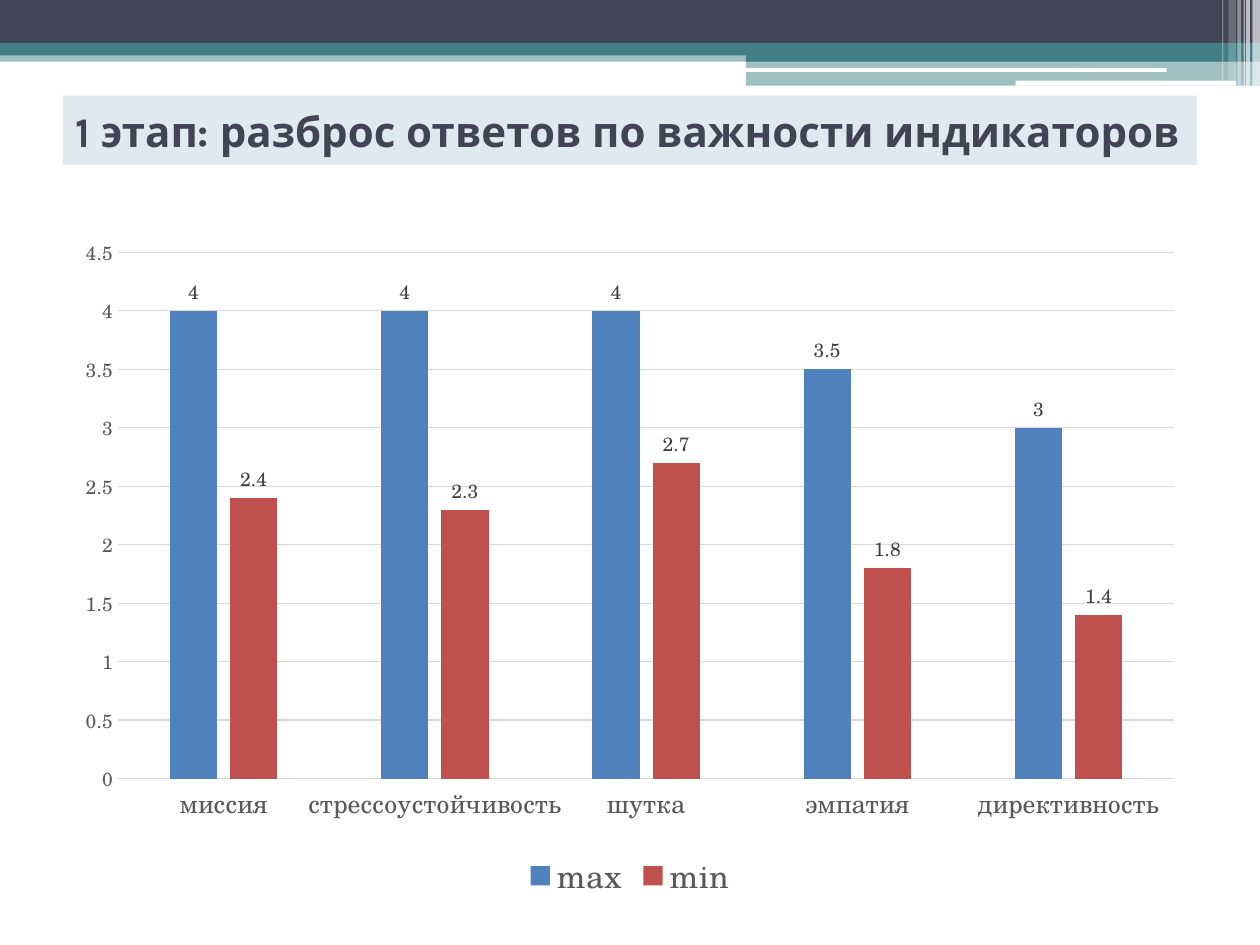
"""Build a slide with a clustered column chart of indicator importance ratings."""
import lxml.etree
import pptx
import pptx.chart.data
import pptx.dml.color
import pptx.enum.chart
import pptx.enum.shapes
import pptx.enum.text
import pptx.oxml.ns
import pptx.util

Inches = pptx.util.Inches
Pt = pptx.util.Pt
SHAPE = pptx.enum.shapes.MSO_SHAPE
XL = pptx.enum.chart

THEME = {
    "dark": "424456", "teal": "438086", "white": "FFFFFF", "title_fill": "DEE9F0",
    "grid": "D9D9D9", "axis_text": "595959", "label_text": "404040", "text": "000000",
    "title_font": "Karla", "chart_font": "TeX Gyre Schola",
    "title_size": 24, "base_size": 10, "category_size": 14.7,
    "value_size": 11, "legend_size": 18.4, "line_width": 0.69,
}

TITLE = "1 этап: разброс ответов по важности индикаторов"
CATEGORIES = ["миссия", "стрессоустойчивость", "шутка", "эмпатия", "директивность"]
SERIES = [
    ("max", "4F81BD", [4, 4, 4, 3.5, 3]),
    ("min", "C0504D", [2.4, 2.3, 2.7, 1.8, 1.4]),
]

BANDS = [
    ((0, 0.4, 10, 0.09), "teal", 50),
    ((0, 0, 10, 0.34), "dark", 100),
    ((0, 0.34, 10, 0.1), "teal", 100),
    ((5.92, 0.39, 4.08, 0.1), "teal", 100),
    ((5.92, 0.48, 4.08, 0.2), "teal", 50),
]
HIGHLIGHTS = [(5.91, 0.54, 3.35, 0.03), (8.06, 0.64, 1.75, 0.04)]
STRIPES = [
    (9.94, 0.06, 0.68, 65), (9.89, 0.03, 0.68, 65), (9.87, 0.01, 0.68, 60),
    (9.82, 0.03, 0.68, 40), (9.75, 0.06, 0.64, 20), (9.7, 0.01, 0.64, 30),
]
TITLE_BOX = (0.5, 0.76, 9, 0.55)
CHART_BOX = (0.5, 1.78, 9, 5.41)


def rgb(value):
    return pptx.dml.color.RGBColor.from_string(value)


def add_box(s, box, color, opacity=100, kind=SHAPE.RECTANGLE):
    sp = s.shapes.add_shape(kind, *map(Inches, box))
    sp.shadow.inherit = False
    sp.line.fill.background()
    sp.fill.solid()
    sp.fill.fore_color.rgb = rgb(THEME[color])
    if opacity < 100:
        clr = sp.fill._xPr.find(".//" + pptx.oxml.ns.qn("a:srgbClr"))
        lxml.etree.SubElement(clr, pptx.oxml.ns.qn("a:alpha"), val=str(opacity * 1000))
    return sp


def set_font(font, name="chart_font", size="value_size", color="axis_text", bold=False):
    font.name = THEME[name]
    font.size = Pt(THEME[size])
    font.bold = bold
    font.color.rgb = rgb(THEME[color])


def write_text(sp, text, **font_format):
    tf = sp.text_frame
    tf.word_wrap = True
    tf.vertical_anchor = pptx.enum.text.MSO_ANCHOR.MIDDLE
    p = tf.paragraphs[0]
    p.alignment = pptx.enum.text.PP_ALIGN.LEFT
    r = p.add_run()
    r.text = text
    set_font(r.font, **font_format)


def set_line(line):
    line.color.rgb = rgb(THEME["grid"])
    line.width = Pt(THEME["line_width"])


def add_header(s):
    for box, color, opacity in BANDS:
        add_box(s, box, color, opacity)
    for box in HIGHLIGHTS:
        add_box(s, box, "white", kind=SHAPE.ROUNDED_RECTANGLE)
    for left, width, height, opacity in STRIPES:
        add_box(s, (left, 0, width, height), "white", opacity)


def add_ratings_chart(s):
    data = pptx.chart.data.CategoryChartData()
    data.categories = CATEGORIES
    for name, _, values in SERIES:
        data.add_series(name, values)
    chart = s.shapes.add_chart(
        XL.XL_CHART_TYPE.COLUMN_CLUSTERED, *map(Inches, CHART_BOX), data).chart
    chart.has_title = False
    set_font(chart.font, size="base_size", color="text")

    chart.has_legend = True
    chart.legend.position = XL.XL_LEGEND_POSITION.BOTTOM
    chart.legend.include_in_layout = False
    set_font(chart.legend.font, size="legend_size")

    for axis, size in ((chart.category_axis, "category_size"), (chart.value_axis, "value_size")):
        axis.major_tick_mark = axis.minor_tick_mark = XL.XL_TICK_MARK.NONE
        set_font(axis.tick_labels.font, size=size)
    set_line(chart.category_axis.format.line)
    axis = chart.value_axis
    axis.minimum_scale, axis.maximum_scale, axis.major_unit = 0, 4.5, 0.5
    axis.format.line.fill.background()
    set_line(axis.major_gridlines.format.line)

    plot = chart.plots[0]
    plot.gap_width, plot.overlap, plot.vary_by_categories = 219, -27, False
    for series, (_, color, _) in zip(plot.series, SERIES):
        series.format.fill.solid()
        series.format.fill.fore_color.rgb = rgb(color)
        series.invert_if_negative = False
        labels = series.data_labels
        labels.show_value = True
        labels.position = XL.XL_LABEL_POSITION.OUTSIDE_END
        set_font(labels.font, color="label_text")


def main():
    prs = pptx.Presentation()
    prs.slide_width, prs.slide_height = Inches(10), Inches(7.5)
    s = prs.slides.add_slide(prs.slide_layouts[6])
    add_header(s)
    write_text(add_box(s, TITLE_BOX, "title_fill"), TITLE,
               name="title_font", size="title_size", color="dark", bold=True)
    add_ratings_chart(s)
    prs.save("out.pptx")


if __name__ == "__main__":
    main()
